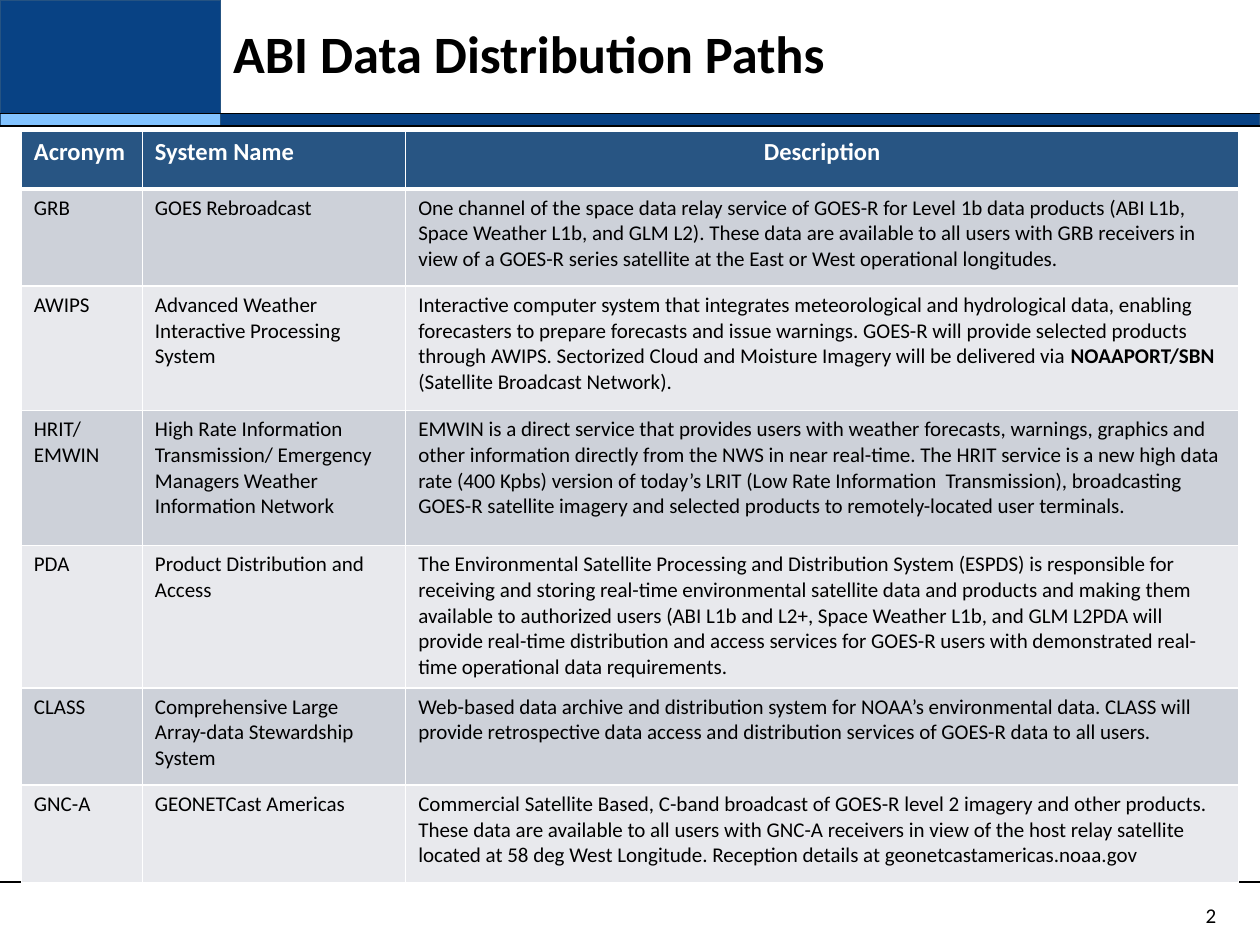
"""Build the slide that lists the ABI data distribution paths in a table."""
from lxml.etree import SubElement
from pptx import Presentation
from pptx.dml.color import RGBColor
from pptx.enum.shapes import MSO_CONNECTOR, MSO_SHAPE
from pptx.enum.text import MSO_ANCHOR, PP_ALIGN
from pptx.oxml.ns import qn
from pptx.util import Cm, Pt

WIDTH, HEIGHT = 25.4, 19.05
SIDEBAR, BAND_TOP, BAND_BOTTOM, FOOTER_TOP = 4.45, 2.29, 2.54, 17.78
NAVY, SKY, EDGE, HEADER_BLUE = "084284", "82C3FF", "255382", "285583"
BLACK, WHITE = "000000", "FFFFFF"
ROW_FILLS = ("CDD1D9", "E8E9ED")

TITLE = "ABI Data Distribution Paths"
PAGE = "2"
HEADINGS = ("Acronym", "System Name", "Description")
KEY_TERM = "NOAAPORT/SBN"
PATHS = [
    ("GRB", "GOES Rebroadcast",
     "One channel of the space data relay service of GOES-R for Level 1b data products "
     "(ABI L1b, Space Weather L1b, and GLM L2). These data are available to all users with "
     "GRB receivers in view of a GOES-R series satellite at the East or West operational "
     "longitudes."),
    ("AWIPS", "Advanced Weather Interactive Processing System",
     "Interactive computer system that integrates meteorological and hydrological data, "
     "enabling forecasters to prepare forecasts and issue warnings. GOES-R will provide "
     "selected products through AWIPS. Sectorized Cloud and Moisture Imagery will be "
     "delivered via NOAAPORT/SBN (Satellite Broadcast Network)."),
    ("HRIT/ EMWIN",
     "High Rate Information Transmission/ Emergency Managers Weather Information Network",
     "EMWIN is a direct service that provides users with weather forecasts, warnings, "
     "graphics and other information directly from the NWS in near real-time. The HRIT "
     "service is a new high data rate (400 Kpbs) version of today’s LRIT (Low Rate "
     "Information  Transmission), broadcasting GOES-R satellite imagery and selected "
     "products to remotely-located user terminals."),
    ("PDA", "Product Distribution and Access",
     "The Environmental Satellite Processing and Distribution System (ESPDS) is responsible "
     "for receiving and storing real-time environmental satellite data and products and "
     "making them available to authorized users (ABI L1b and L2+, Space Weather L1b, and GLM "
     "L2PDA will provide real-time distribution and access services for GOES-R users with "
     "demonstrated real-time operational data requirements."),
    ("CLASS", "Comprehensive Large Array-data Stewardship System",
     "Web-based data archive and distribution system for NOAA’s environmental data. CLASS "
     "will provide retrospective data access and distribution services of GOES-R data to all "
     "users."),
    ("GNC-A", "GEONETCast Americas",
     "Commercial Satellite Based, C-band broadcast of GOES-R level 2 imagery and other "
     "products. These data are available to all users with GNC-A receivers in view of the "
     "host relay satellite located at 58 deg West Longitude. Reception details at "
     "geonetcastamericas.noaa.gov"),
]
TABLE_LEFT, TABLE_TOP = 0.43, 2.64
COLUMN_WIDTHS = (2.44, 5.31, 16.79)
ROW_HEIGHTS = (1.17, 1.96, 2.51, 2.72, 2.87, 1.96, 1.96)
BANDS = [
    (0, 0, SIDEBAR, BAND_TOP, NAVY),
    (SIDEBAR, BAND_TOP, WIDTH - SIDEBAR, BAND_BOTTOM - BAND_TOP, NAVY),
    (0, BAND_TOP, SIDEBAR, BAND_BOTTOM - BAND_TOP, SKY),
]
TITLE_FONT = {"name": "Calibri", "size": Pt(30), "bold": True}
HEADING_FONT = {"name": "Calibri", "size": Pt(14), "bold": True}
BODY_FONT = {"name": "Calibri", "size": Pt(12), "bold": False}


def color(hex_value):
    """Turn a hex string into a colour."""
    return RGBColor.from_string(hex_value)


def write(paragraph, text, font_format, ink=BLACK):
    """Add the text, with the key term in bold."""
    before, term, after = text.partition(KEY_TERM)
    for part in filter(None, (before, term, after)):
        run = paragraph.add_run()
        run.text = part
        for attribute, value in font_format.items():
            setattr(run.font, attribute, value)
        run.font.color.rgb = color(ink)
        if part == KEY_TERM:
            run.font.bold = True


def add_label(slide, box, text, font_format, **paragraph_format):
    """Add a wrapped, vertically centred text box."""
    frame = slide.shapes.add_textbox(*map(Cm, box)).text_frame
    frame.word_wrap = True
    frame.vertical_anchor = MSO_ANCHOR.MIDDLE
    paragraph = frame.paragraphs[0]
    for attribute, value in paragraph_format.items():
        setattr(paragraph, attribute, value)
    write(paragraph, text, font_format)


def add_band(slide, left, top, width, height, fill):
    """Add one rectangle of the page frame."""
    band = slide.shapes.add_shape(MSO_SHAPE.RECTANGLE, *map(Cm, (left, top, width, height)))
    band.shadow.inherit = False
    band.fill.solid()
    band.fill.fore_color.rgb = color(fill)
    band.line.color.rgb = color(EDGE)
    band.line.width = Pt(0.75)


def add_rule(slide, y):
    """Add a black line across the page."""
    rule = slide.shapes.add_connector(MSO_CONNECTOR.STRAIGHT, 0, Cm(y), Cm(WIDTH), Cm(y))
    rule.line.color.rgb = color(BLACK)
    rule.line.width = Pt(1)
    SubElement(rule.element.spPr, qn("a:effectLst"))


def style_cell(cell, fill, top, bottom):
    """Give a cell white borders and a solid fill."""
    properties = cell._tc.get_or_add_tcPr()
    for side, points in {"L": 1, "R": 1, "T": top, "B": bottom}.items():
        border = SubElement(properties, qn(f"a:ln{side}"), w=str(Pt(points)))
        SubElement(SubElement(border, qn("a:solidFill")), qn("a:srgbClr"), val=WHITE)
    cell.fill.solid()
    cell.fill.fore_color.rgb = color(fill)


def add_paths_table(slide):
    """Add the table of distribution paths."""
    rows = [HEADINGS, *PATHS]
    box = (TABLE_LEFT, TABLE_TOP, sum(COLUMN_WIDTHS), sum(ROW_HEIGHTS))
    table = slide.shapes.add_table(len(rows), len(HEADINGS), *map(Cm, box)).table
    for column, width in zip(table.columns, COLUMN_WIDTHS):
        column.width = Cm(width)
    for index, (row, height, texts) in enumerate(zip(table.rows, ROW_HEIGHTS, rows)):
        row.height = Cm(height)
        heading = index == 0
        fill = HEADER_BLUE if heading else ROW_FILLS[(index - 1) % 2]
        for cell, text in zip(row.cells, texts):
            style_cell(cell, fill, 3 if index == 1 else 1, 3 if heading else 1)
            paragraph = cell.text_frame.paragraphs[0]
            if text == HEADINGS[-1]:
                paragraph.alignment = PP_ALIGN.CENTER
            write(paragraph, text, HEADING_FONT if heading else BODY_FONT,
                  WHITE if heading else BLACK)


def main():
    """Assemble and save the slide."""
    deck = Presentation()
    deck.slide_width, deck.slide_height = Cm(WIDTH), Cm(HEIGHT)
    slide = deck.slides.add_slide(deck.slide_layouts[6])
    for band in BANDS:
        add_band(slide, *band)
    for y in (BAND_BOTTOM, BAND_TOP, FOOTER_TOP):
        add_rule(slide, y)
    add_label(slide, (SIDEBAR, 0, 20.32, BAND_TOP), TITLE, TITLE_FONT, line_spacing=0.9)
    add_paths_table(slide)
    add_label(slide, (19.94, 17.93, 4.83, 1.02), PAGE, BODY_FONT, alignment=PP_ALIGN.RIGHT)
    deck.save("out.pptx")


if __name__ == "__main__":
    main()
